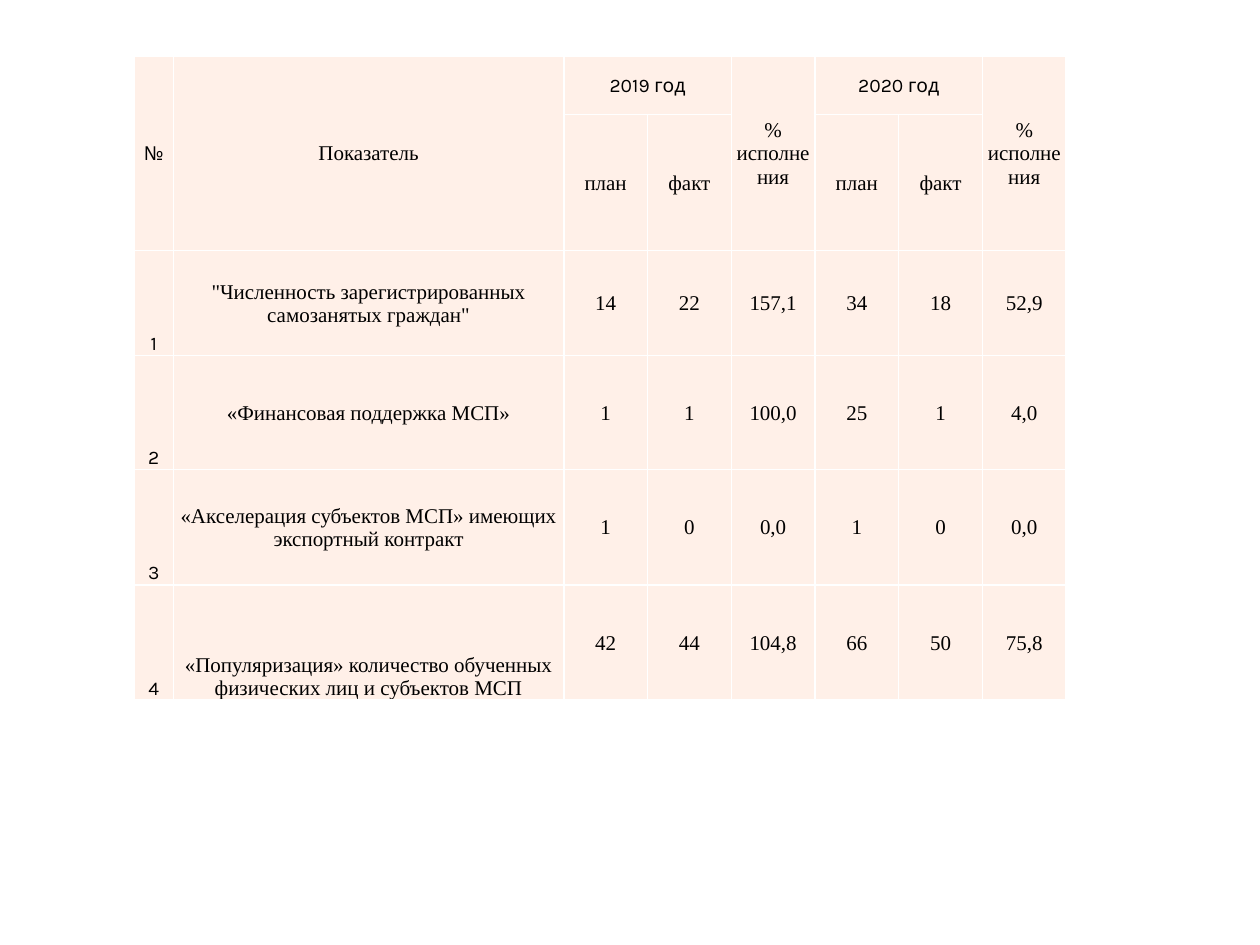
from dataclasses import dataclass

import lxml.etree
import pptx
import pptx.dml.color
import pptx.enum.text
import pptx.oxml.ns
import pptx.util

Pt = pptx.util.Pt
Anchor = pptx.enum.text.MSO_ANCHOR


@dataclass(frozen=True)
class Theme:
    fill: str = "FFF0E8"
    rule: str = "FFFFFF"
    ink: str = "000000"
    body_font: str = "Times New Roman"
    body_size: float = 12
    label_font: str = "Karla"
    label_size: float = 11
    rule_width: float = 1
    inset: float = 0.75


THEME = Theme()
COLUMN_WIDTHS = [22.6, 223] + [47.85] * 6
ROW_HEIGHTS = [33.5, 77.7, 60, 65, 66, 66]
YEAR_COLUMNS = {2: "2019 год", 5: "2020 год"}
INDICATORS = [
    ('"Численность зарегистрированных самозанятых граждан"',
     "14", "22", "157,1", "34", "18", "52,9"),
    ("«Финансовая поддержка МСП»", "1", "1", "100,0", "25", "1", "4,0"),
    ("«Акселерация субъектов МСП» имеющих экспортный контракт",
     "1", "0", "0,0", "1", "0", "0,0"),
    ("«Популяризация» количество обученных физических лиц и субъектов МСП",
     "42", "44", "104,8", "66", "50", "75,8"),
]


def rgb(value):
    return pptx.dml.color.RGBColor.from_string(value)


def draw_borders(cell):
    properties = cell._tc.get_or_add_tcPr()
    qn = pptx.oxml.ns.qn
    for side in ("lnL", "lnR", "lnT", "lnB"):
        line = lxml.etree.SubElement(
            properties, qn(f"a:{side}"), w=str(Pt(THEME.rule_width)))
        solid = lxml.etree.SubElement(line, qn("a:solidFill"))
        lxml.etree.SubElement(solid, qn("a:srgbClr"), val=THEME.rule)


def style_cell(cell):
    draw_borders(cell)
    cell.fill.solid()
    cell.fill.fore_color.rgb = rgb(THEME.fill)
    cell.margin_left = cell.margin_right = cell.margin_top = Pt(THEME.inset)
    cell.margin_bottom = Pt(0)


def write_cell(cell, text, label=False, anchor=Anchor.MIDDLE):
    cell.text = text
    cell.vertical_anchor = anchor
    paragraph = cell.text_frame.paragraphs[0]
    paragraph.alignment = pptx.enum.text.PP_ALIGN.CENTER
    paragraph.font.name = THEME.label_font if label else THEME.body_font
    paragraph.font.size = Pt(THEME.label_size if label else THEME.body_size)
    paragraph.font.color.rgb = rgb(THEME.ink)


def add_grid(slide):
    frame = slide.shapes.add_table(
        len(ROW_HEIGHTS), len(COLUMN_WIDTHS), Pt(76.6), Pt(32),
        Pt(sum(COLUMN_WIDTHS)), Pt(sum(ROW_HEIGHTS)))
    table = frame.table
    table.first_row = table.horz_banding = False
    for column, width in zip(table.columns, COLUMN_WIDTHS):
        column.width = Pt(width)
    for row, height in zip(table.rows, ROW_HEIGHTS):
        row.height = Pt(height)
    for cell in table.iter_cells():
        style_cell(cell)
    return table


def write_tall_heading(table, column, text, label=False):
    table.cell(0, column).merge(table.cell(1, column))
    write_cell(table.cell(0, column), text, label)


def write_headings(table):
    write_tall_heading(table, 0, "№", label=True)
    write_tall_heading(table, 1, "Показатель")
    for column, year in YEAR_COLUMNS.items():
        table.cell(0, column).merge(table.cell(0, column + 1))
        write_cell(table.cell(0, column), year, label=True)
        write_cell(table.cell(1, column), "план")
        write_cell(table.cell(1, column + 1), "факт")
        write_tall_heading(table, column + 2, "% исполнения")


def write_indicators(table):
    for number, (indicator, *values) in enumerate(INDICATORS, 1):
        row = number + 1
        is_last = number == len(INDICATORS)
        write_cell(table.cell(row, 0), str(number), True, Anchor.BOTTOM)
        write_cell(table.cell(row, 1), indicator,
                   anchor=Anchor.BOTTOM if is_last else Anchor.MIDDLE)
        for column, value in enumerate(values, 2):
            write_cell(table.cell(row, column), value)


def main():
    presentation = pptx.Presentation()
    presentation.slide_width = Pt(720)
    presentation.slide_height = Pt(540)
    slide = presentation.slides.add_slide(presentation.slide_layouts[6])
    table = add_grid(slide)
    write_headings(table)
    write_indicators(table)
    presentation.save("out.pptx")


if __name__ == "__main__":
    main()
